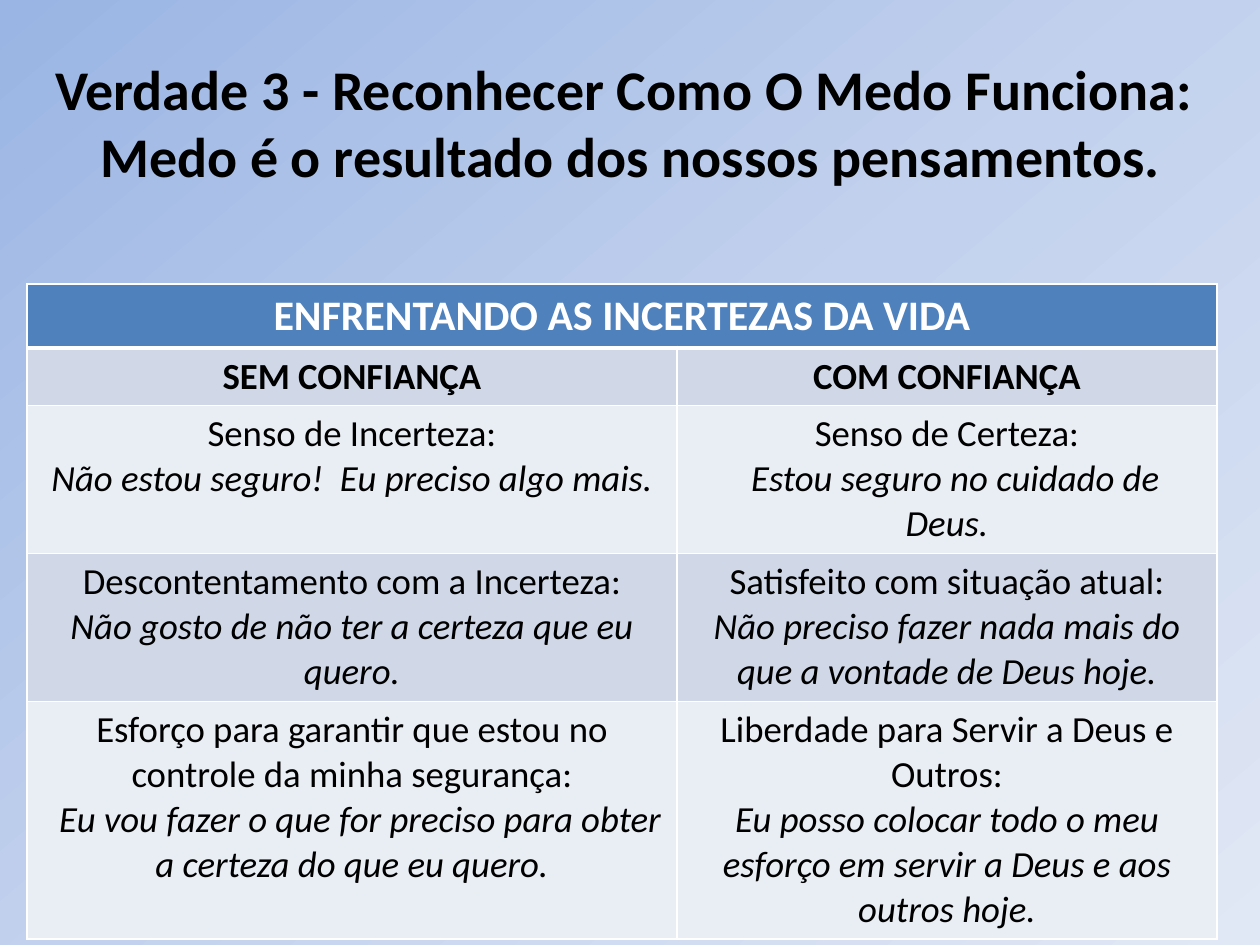
from copy import deepcopy

from lxml import etree
from pptx import Presentation
from pptx.dml.color import RGBColor
from pptx.enum.text import MSO_ANCHOR, PP_ALIGN
from pptx.oxml.ns import qn
from pptx.util import Pt

CENTER = PP_ALIGN.CENTER
TOP = MSO_ANCHOR.TOP
PX_PER_INCH = 126
FONT = "Calibri"
BLACK, WHITE, HEADER_BLUE = "000000", "FFFFFF", "4F81BD"
BANDS = ["D0D8E8", "E9EDF4"]
BACKGROUND_STOPS = [(0, "9AB5E4"), (0.5, "C2D1ED"), (1, "E1E8F5")]

TITLE_RUNS = ["Verdade 3 - Reconhecer Como O Medo Funciona: ",
              " Medo é o resultado dos nossos pensamentos."]
TABLE_TITLE = "ENFRENTANDO AS INCERTEZAS DA VIDA"
COLUMN_TITLES = ["SEM CONFIANÇA", "COM CONFIANÇA"]
# Each cell: heading, then the thought in italics
COMPARISONS = [
    [("Senso de Incerteza:", "Não estou seguro!  Eu preciso algo mais."),
     ("Senso de Certeza:", "  Estou seguro no cuidado de Deus.")],
    [("Descontentamento com a Incerteza:",
      "Não gosto de não ter a certeza que eu quero."),
     ("Satisfeito com situação atual:",
      "Não preciso fazer nada mais do que a vontade de Deus hoje.")],
    [("Esforço para garantir que estou no controle da minha segurança:",
      "  Eu vou fazer o que for preciso para obter a certeza do que eu quero."),
     ("Liberdade para Servir a Deus e Outros:",
      "Eu posso colocar todo o meu esforço em servir a Deus e aos outros hoje.")],
]


def px(length):
    return round(length * 914400 / PX_PER_INCH)


def color(hex_string):
    return RGBColor.from_string(hex_string)


class SlideBuilder:
    def __init__(self, presentation):
        self.slide = presentation.slides.add_slide(presentation.slide_layouts[6])

    def background(self, stops, clockwise_angle):
        fill = self.slide.background.fill
        fill.gradient()
        fill.gradient_angle = 360 - clockwise_angle
        stop_list = next(self.slide.element.iter(qn("a:gsLst")))
        while len(stop_list) < len(stops):
            stop_list.append(deepcopy(stop_list[0]))
        for stop, (position, hex_string) in zip(fill.gradient_stops, stops):
            stop.position = position
            stop.color.rgb = color(hex_string)

    def run(self, paragraph, text, size, hex_string=BLACK, bold=False, italic=False):
        paragraph.alignment = CENTER
        run = paragraph.add_run()
        run.text = text
        font = run.font
        font.name, font.size = FONT, Pt(size)
        font.bold, font.italic = bold, italic
        font.color.rgb = color(hex_string)

    def title(self, runs, left, top, width, height):
        frame = self.slide.shapes.add_textbox(
            px(left), px(top), px(width), px(height)).text_frame
        frame.word_wrap = True
        frame.vertical_anchor = TOP
        for text in runs:
            self.run(frame.paragraphs[0], text, 32, bold=True)

    def table(self, left, top, widths, heights):
        table = self.slide.shapes.add_table(
            len(heights), len(widths), px(left), px(top),
            px(sum(widths)), px(sum(heights))).table
        table.first_row = table.horz_banding = False
        for column, width in zip(table.columns, widths):
            column.width = px(width)
        for row, height in zip(table.rows, heights):
            row.height = px(height)
        return table

    def cell(self, cell, fill, top_line=1, bottom_line=1):
        cell.fill.solid()
        cell.fill.fore_color.rgb = color(fill)
        properties = cell._tc.get_or_add_tcPr()
        sides = [("L", 1), ("R", 1), ("T", top_line), ("B", bottom_line)]
        for index, (side, points) in enumerate(sides):
            line = etree.Element(qn(f"a:ln{side}"), w=str(Pt(points)))
            solid = etree.SubElement(line, qn("a:solidFill"))
            etree.SubElement(solid, qn("a:srgbClr"), val=WHITE)
            properties.insert(index, line)
        return cell.text_frame.paragraphs[0]


def main():
    presentation = Presentation()
    presentation.slide_width, presentation.slide_height = px(1260), px(945)
    builder = SlideBuilder(presentation)
    builder.background(BACKGROUND_STOPS, 50)

    # Table heading across both columns
    table = builder.table(27, 284, [650, 540], [64, 57, 148, 148, 237])
    table.cell(0, 0).merge(table.cell(0, 1))
    for column in range(2):
        builder.cell(table.cell(0, column), HEADER_BLUE, bottom_line=3)
    builder.run(table.cell(0, 0).text_frame.paragraphs[0],
                TABLE_TITLE, 24, WHITE, bold=True)

    # Column titles
    for column, text in enumerate(COLUMN_TITLES):
        paragraph = builder.cell(table.cell(1, column), BANDS[0], top_line=3)
        builder.run(paragraph, text, 21, bold=True)

    # Comparison rows
    for row, pair in enumerate(COMPARISONS, start=2):
        for column, (heading, thought) in enumerate(pair):
            paragraph = builder.cell(table.cell(row, column), BANDS[(row - 1) % 2])
            builder.run(paragraph, heading, 21)
            paragraph.add_line_break()
            builder.run(paragraph, thought, 21, italic=True)

    # Slide title
    builder.title(TITLE_RUNS, 35, 48, 1191, 117)
    presentation.save("out.pptx")


if __name__ == "__main__":
    main()
